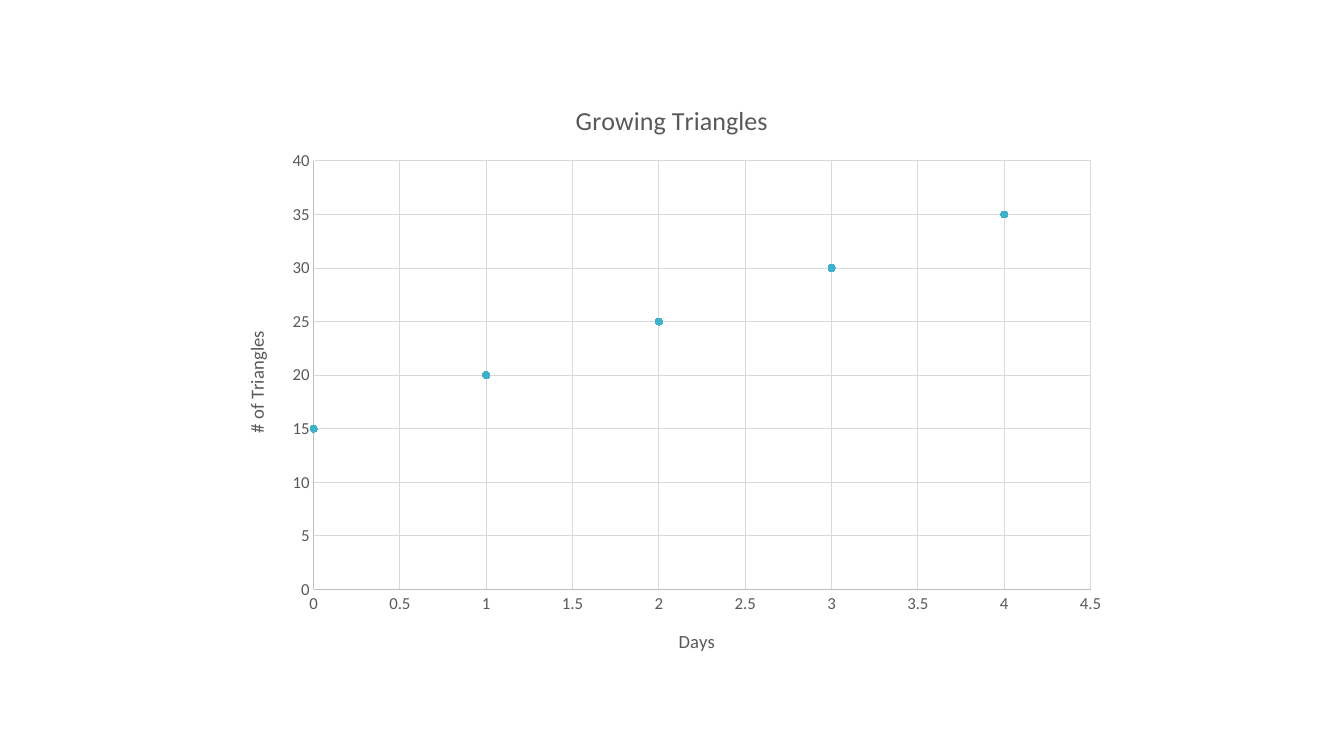
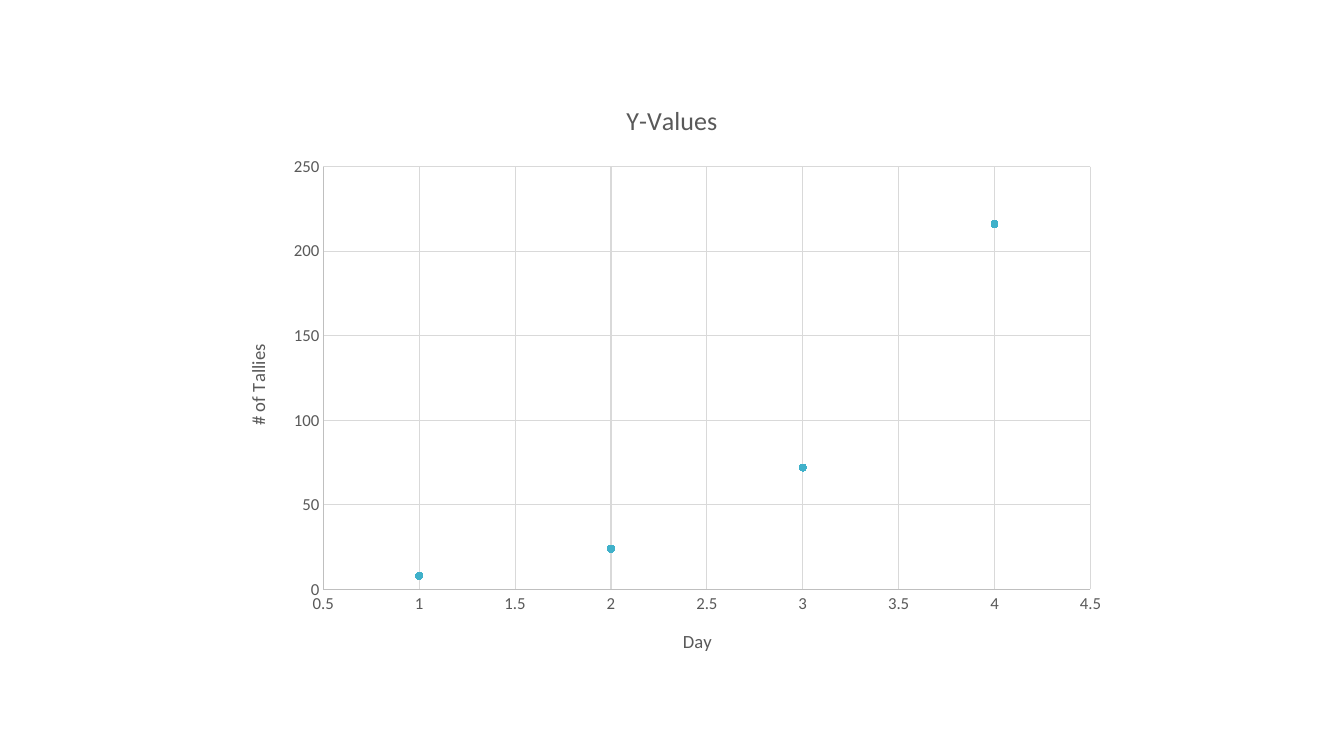
import pptx
import pptx.chart.data
import pptx.dml.color
import pptx.enum.chart
import pptx.oxml
import pptx.oxml.ns
import pptx.util

Pt = pptx.util.Pt
FONT = "Calibri"
TEXT = "595959"
AXIS_LINE = "BFBFBF"
GRID_LINE = "D9D9D9"
MARKER = "40B1CA"
CHART_BOX = (160, 57, 640, 427)
PLOT_RIGHT, PLOT_BOTTOM = 779, 421


def color(value):
    return pptx.dml.color.RGBColor.from_string(value)


def style_font(font, size):
    font.name = FONT
    font.size = Pt(size)
    font.bold = False
    font.color.rgb = color(TEXT)


def style_line(line, value):
    line.color.rgb = color(value)
    line.width = Pt(0.75)


def write_title(title, text, size):
    title.text_frame.text = text
    style_font(title.text_frame.paragraphs[0].font, size)


def style_axis(axis, title, scale, rotation):
    axis.minimum_scale, axis.maximum_scale, axis.major_unit = scale
    axis.has_major_gridlines = True
    style_line(axis.major_gridlines.format.line, GRID_LINE)
    style_line(axis.format.line, AXIS_LINE)
    axis.major_tick_mark = pptx.enum.chart.XL_TICK_MARK.NONE
    axis.minor_tick_mark = pptx.enum.chart.XL_TICK_MARK.NONE
    axis.tick_labels.number_format = "General"
    axis.tick_labels.number_format_is_linked = False
    style_font(axis.tick_labels.font, 12)
    write_title(axis.axis_title, title, 13.3)
    body = axis.axis_title._element.find(".//" + pptx.oxml.ns.qn("a:bodyPr"))
    body.set("rot", str(rotation * 60000))
    body.set("vert", "horz")


def place_plot(chart, box, plot_left, plot_top):
    left, top, width, height = box
    fractions = {
        "x": (plot_left - left) / width,
        "y": (plot_top - top) / height,
        "w": (PLOT_RIGHT - plot_left) / width,
        "h": (PLOT_BOTTOM - plot_top) / height,
    }
    modes = "".join(f'<c:{key}Mode val="edge"/>' for key in "xy")
    sizes = "".join(f'<c:{key} val="{value:.4f}"/>' for key, value in fractions.items())
    layout = pptx.oxml.parse_xml(
        f'<c:layout {pptx.oxml.ns.nsdecls("c")}><c:manualLayout>'
        f'<c:layoutTarget val="inner"/>{modes}{sizes}</c:manualLayout></c:layout>'
    )
    plot_area = chart._chartSpace.chart.plotArea
    for previous in plot_area.findall(pptx.oxml.ns.qn("c:layout")):
        plot_area.remove(previous)
    plot_area.insert(0, layout)


def add_scatter_slide(presentation, box, title, series_name, points, x_axis, y_axis, plot_corner):
    slide = presentation.slides.add_slide(presentation.slide_layouts[6])
    data = pptx.chart.data.XyChartData()
    series_data = data.add_series(series_name)
    for x, y in points:
        series_data.add_data_point(x, y)
    chart = slide.shapes.add_chart(
        pptx.enum.chart.XL_CHART_TYPE.XY_SCATTER, *map(Pt, box), data
    ).chart
    chart.has_legend = False
    chart.font.name = FONT
    chart.font.size = Pt(10)
    chart.has_title = True
    write_title(chart.chart_title, title, 18.6)
    chart.chart_title.include_in_layout = False
    style_axis(chart.category_axis, *x_axis, 0)
    style_axis(chart.value_axis, *y_axis, -90)
    place_plot(chart, box, *plot_corner)

    plot = chart.plots[0]
    plot.vary_by_categories = False
    series = plot.series[0]
    series.format.line.fill.background()
    series.marker.style = pptx.enum.chart.XL_MARKER_STYLE.CIRCLE
    series.marker.size = 5
    series.marker.format.fill.solid()
    series.marker.format.fill.fore_color.rgb = color(MARKER)
    style_line(series.marker.format.line, MARKER)


def main():
    presentation = pptx.Presentation()
    presentation.slide_width = Pt(960)
    presentation.slide_height = Pt(540)
    add_scatter_slide(
        presentation, CHART_BOX, "Growing Triangles", "Series 1",
        [(0, 15), (1, 20), (2, 25), (3, 30), (4, 35)],
        ("Days", (0, 4.5, 0.5)), ("# of Triangles", (0, 40, 5)), (224, 115),
    )
    add_scatter_slide(
        presentation, CHART_BOX, "Y-Values", "Y-Values",
        [(1, 8), (2, 24), (3, 72), (4, 216)],
        ("Day", (0.5, 4.5, 0.5)), ("# of Tallies", (0, 250, 50)), (231, 119),
    )
    presentation.save("out.pptx")


if __name__ == "__main__":
    main()
